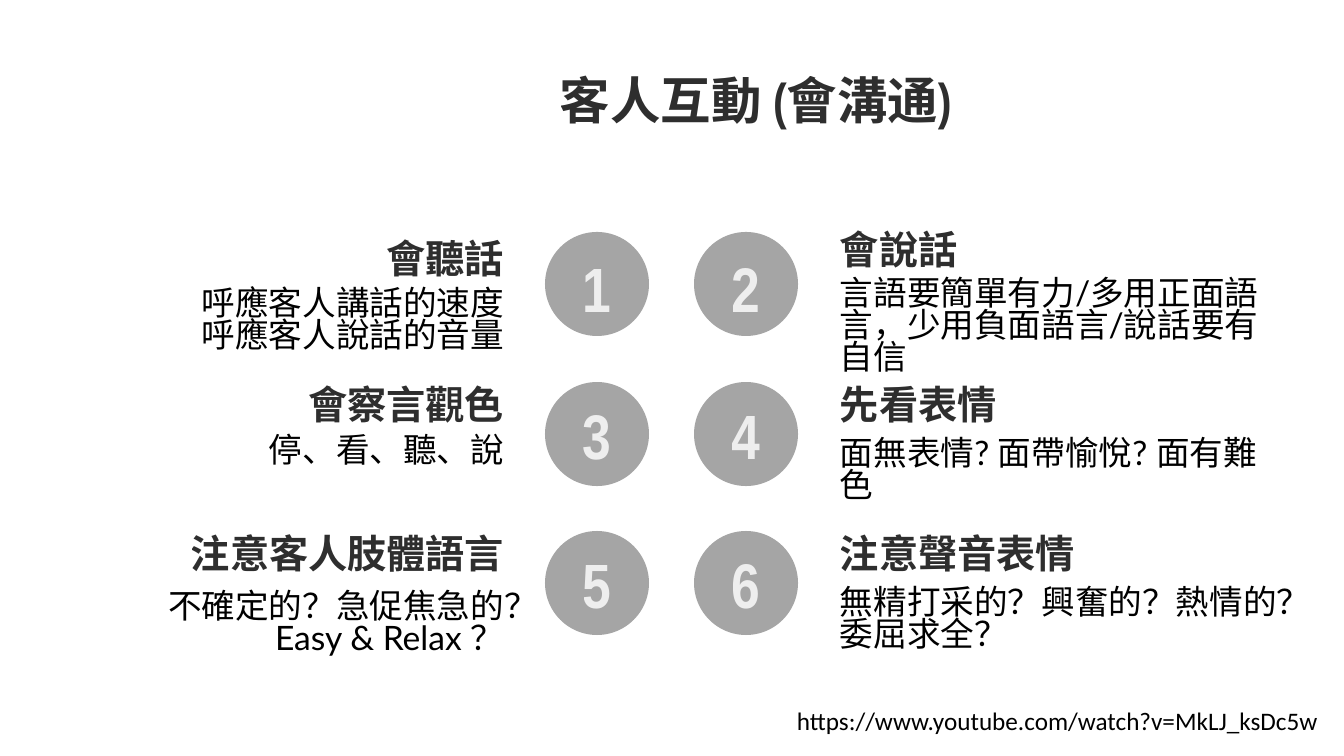
from lxml.etree import SubElement
from pptx import Presentation
from pptx.dml.color import RGBColor
from pptx.enum.shapes import MSO_SHAPE
from pptx.enum.text import MSO_AUTO_SIZE, PP_ALIGN
from pptx.oxml.ns import qn
from pptx.util import Emu, Pt

# Content
TITLE = "客人互動 (會溝通)"
VIDEO_LINK = "https://www.youtube.com/watch?v=MkLJ_ksDc5w"
# Skills in reading order: heading, heading top, body lines, body top, body height
SKILLS = [
    ("會聽話", 229, ["呼應客人講話的速度", "呼應客人說話的音量"], 285, 76),
    ("會說話", 220, ["言語要簡單有力/多用正面語言，少用負面語言/說話要有自信"], 275, 76),
    ("會察言觀色", 375, ["停、看、聽、說"], 432, 42),
    ("先看表情", 375, ["面無表情? 面帶愉悅? 面有難色"], 435, 42),
    ("注意客人肢體語言", 524, ["不確定的？急促焦急的？ Easy & Relax ？"], 588, 76),
    ("注意聲音表情", 524, ["無精打采的？興奮的？熱情的？委屈求全？"], 584, 76),
]

# Layout in px
SLIDE_WIDTH, SLIDE_HEIGHT = 1344, 756
CIRCLE_LEFTS = (545, 694)
CIRCLE_TOPS = (232, 382, 531)
NUMBER_TOPS = (245, 392, 541)
CIRCLE_SIZE, NUMBER_WIDTH = 104, 80
LEFT_COLUMN_END, RIGHT_COLUMN_START = 514, 830
HEADING_WIDTH = 357
BODY_WIDTHS = (378, 469)

BLACK = RGBColor(0x00, 0x00, 0x00)
WHITE = RGBColor(0xFF, 0xFF, 0xFF)
GREY = RGBColor(0xA5, 0xA5, 0xA5)


def px(length):
    return Emu(round(length * 914400 / 100.8))


def add_text(box, lines, size, font, color=BLACK, bold=False, opacity=100,
             align=PP_ALIGN.LEFT, spacing=None, wrap=True):
    text_box = slide.shapes.add_textbox(*[px(length) for length in box])
    frame = text_box.text_frame
    frame.word_wrap = wrap
    frame.auto_size = MSO_AUTO_SIZE.SHAPE_TO_FIT_TEXT
    for index, line in enumerate(lines):
        paragraph = frame.paragraphs[0] if index == 0 else frame.add_paragraph()
        paragraph.alignment = align
        if spacing:
            paragraph.line_spacing = Pt(spacing)
        run = paragraph.add_run()
        run.text = line
        run.font.size, run.font.name, run.font.bold = Pt(size), font, bold
        run.font.color.rgb = color
        if opacity < 100:
            rgb = run.font.fill._xPr.find(qn("a:solidFill"))[0]
            SubElement(rgb, qn("a:alpha")).set("val", str(opacity * 1000))
    return frame


presentation = Presentation()
presentation.slide_width, presentation.slide_height = px(SLIDE_WIDTH), px(SLIDE_HEIGHT)
slide = presentation.slides.add_slide(presentation.slide_layouts[6])

# Title, indented to sit over the circles
title = add_text((0, 64, SLIDE_WIDTH, 132), [TITLE], 36, "Arial Narrow",
                 bold=True, opacity=82)
title.margin_left = px(560)

# Numbered circles with a heading and body on the outer side
for index, (heading, heading_top, body, body_top, body_height) in enumerate(SKILLS):
    row, column = divmod(index, 2)
    circle_left = CIRCLE_LEFTS[column]
    circle = slide.shapes.add_shape(
        MSO_SHAPE.OVAL, px(circle_left), px(CIRCLE_TOPS[row]),
        px(CIRCLE_SIZE), px(CIRCLE_SIZE))
    circle.shadow.inherit = False
    circle.fill.solid()
    circle.fill.fore_color.rgb = GREY
    circle.line.fill.background()

    number_left = circle_left + (CIRCLE_SIZE - NUMBER_WIDTH) // 2
    add_text((number_left, NUMBER_TOPS[row], NUMBER_WIDTH, 87), [str(index + 1)],
             45, "Arial Narrow", WHITE, True, 82, PP_ALIGN.CENTER)

    body_width = BODY_WIDTHS[column]
    if column == 0:
        align = PP_ALIGN.RIGHT
        heading_left = LEFT_COLUMN_END - HEADING_WIDTH
        body_left = LEFT_COLUMN_END - body_width
    else:
        align = PP_ALIGN.LEFT
        heading_left = body_left = RIGHT_COLUMN_START
    add_text((heading_left, heading_top, HEADING_WIDTH, 57), [heading],
             28, "Lato", bold=True, opacity=82, align=align)
    add_text((body_left, body_top, body_width, body_height), body,
             24, "Lato", align=align, spacing=23)

# Video link
add_text((787, 700, 547, 40), [VIDEO_LINK], 18, "Calibri", wrap=False)

presentation.save("out.pptx")
